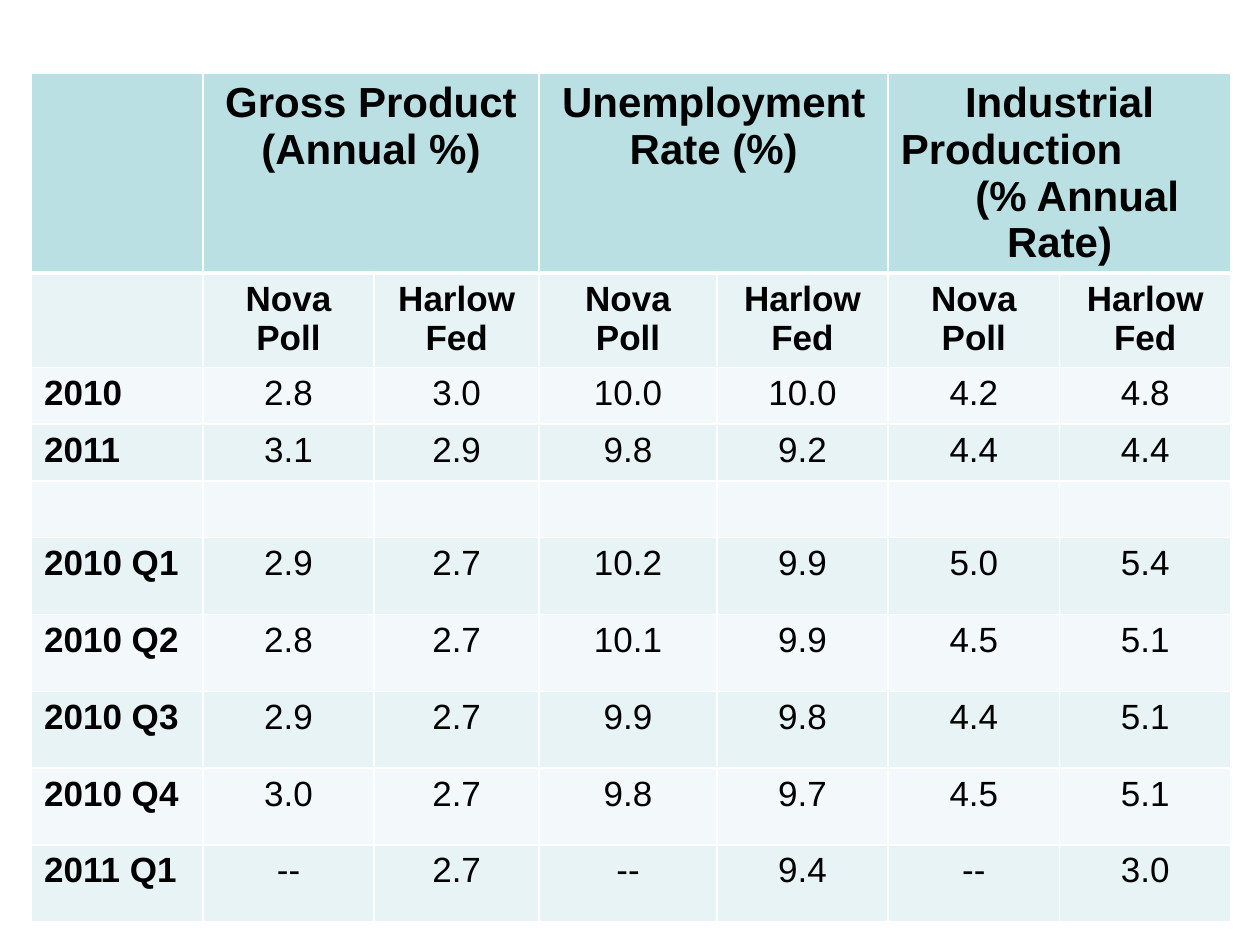
from dataclasses import dataclass

from pptx import Presentation
from pptx.dml.color import RGBColor
from pptx.enum.text import PP_ALIGN as Align
from pptx.oxml import parse_xml
from pptx.oxml.ns import nsdecls
from pptx.table import _Cell as Cell
from pptx.util import Inches, Pt

BLACK = RGBColor(0x00, 0x00, 0x00)
WHITE = RGBColor(0xFF, 0xFF, 0xFF)
HEADER_FILL = RGBColor(0xBB, 0xE0, 0xE3)
BAND_FILLS = (RGBColor(0xF3, 0xF9, 0xFA), RGBColor(0xE7, 0xF3, 0xF4))

COLUMN_WIDTHS = (1.36, 1.36, 1.31, 1.41, 1.36, 1.36, 1.36)
ROW_HEIGHTS = (1.58, 0.75, *[0.45] * 3, *[0.61] * 5)


@dataclass(frozen=True)
class Line:
    text: str
    align: Align = Align.CENTER
    indent: float = 0


MEASURES = (
    (Line("Gross Product"), Line("(Annual %)")),
    (Line("Unemployment"), Line("Rate (%)")),
    (
        Line("Industrial"),
        Line("Production", Align.LEFT),
        Line("(% Annual", indent=0.28),
        Line("Rate)"),
    ),
)
SURVEYS = ("Nova Poll", "Harlow Fed")
FORECASTS = (
    ("2010", "2.8", "3.0", "10.0", "10.0", "4.2", "4.8"),
    ("2011", "3.1", "2.9", "9.8", "9.2", "4.4", "4.4"),
    ("",) * 7,
    ("2010 Q1", "2.9", "2.7", "10.2", "9.9", "5.0", "5.4"),
    ("2010 Q2", "2.8", "2.7", "10.1", "9.9", "4.5", "5.1"),
    ("2010 Q3", "2.9", "2.7", "9.9", "9.8", "4.4", "5.1"),
    ("2010 Q4", "3.0", "2.7", "9.8", "9.7", "4.5", "5.1"),
    ("2011 Q1", "--", "2.7", "--", "9.4", "--", "3.0"),
)


def style_cell(cell: Cell, fill: RGBColor, top: float, bottom: float) -> None:
    properties = cell._tc.get_or_add_tcPr()
    for side, width in {"L": 1, "R": 1, "T": top, "B": bottom}.items():
        properties.append(parse_xml(
            f'<a:ln{side} {nsdecls("a")} w="{Pt(width)}"><a:solidFill>'
            f'<a:srgbClr val="{WHITE}"/></a:solidFill></a:ln{side}>'
        ))
    cell.fill.solid()
    cell.fill.fore_color.rgb = fill


def write_cell(cell: Cell, lines: tuple[Line, ...], size: int, bold: bool) -> None:
    frame = cell.text_frame
    for index, line in enumerate(lines):
        para = frame.paragraphs[0] if index == 0 else frame.add_paragraph()
        para.alignment = line.align
        if line.indent:
            para._p.get_or_add_pPr().set("marL", str(Inches(line.indent)))
        span = para.add_run()
        span.text = line.text
        span.font.color.rgb = BLACK
        for name, value in {"name": "Arial", "size": Pt(size), "bold": bold}.items():
            setattr(span.font, name, value)


def main() -> None:
    deck = Presentation()
    deck.slide_width, deck.slide_height = Inches(10), Inches(7.5)
    page = deck.slides.add_slide(deck.slide_layouts[6])
    table = page.shapes.add_table(
        len(ROW_HEIGHTS), len(COLUMN_WIDTHS), Inches(0.25), Inches(0.58),
        Inches(sum(COLUMN_WIDTHS)), Inches(sum(ROW_HEIGHTS)),
    ).table
    table.horz_banding = False
    for column, width in zip(table.columns, COLUMN_WIDTHS):
        column.width = Inches(width)

    for index, (row, height) in enumerate(zip(table.rows, ROW_HEIGHTS)):
        row.height = Inches(height)
        fill = BAND_FILLS[index % 2] if index else HEADER_FILL
        for cell in row.cells:
            style_cell(cell, fill, 3 if index == 1 else 1, 3 if index == 0 else 1)

    for index, lines in enumerate(MEASURES):
        first = 1 + index * len(SURVEYS)
        heading = table.cell(0, first)
        heading.merge(table.cell(0, first + len(SURVEYS) - 1))
        write_cell(heading, lines, 24, True)

    body = (("", *SURVEYS * len(MEASURES)), *FORECASTS)
    for row_index, values in enumerate(body, start=1):
        for column_index, value in enumerate(values):
            if value:
                align = Align.CENTER if column_index else Align.LEFT
                bold = row_index == 1 or column_index == 0
                write_cell(table.cell(row_index, column_index), (Line(value, align),), 20, bold)

    deck.save("out.pptx")


if __name__ == "__main__":
    main()
